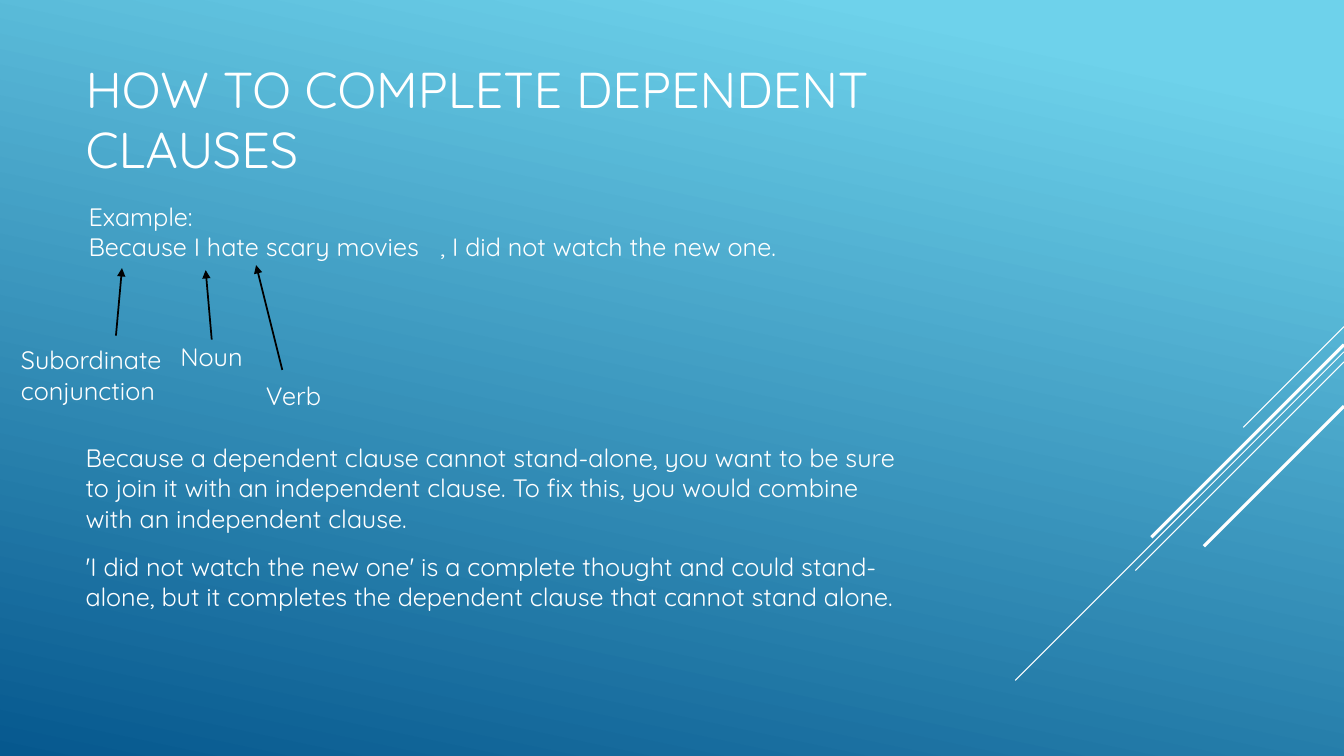
import pptx
import pptx.util
import pptx.dml.color
import pptx.enum.shapes
import pptx.enum.text
import pptx.oxml.ns
import lxml.etree

EMU_PER_PX = 9144
SLIDE_WIDTH, SLIDE_HEIGHT = 1333, 750
FONT = "Quicksand"
WHITE = pptx.dml.color.RGBColor(0xFF, 0xFF, 0xFF)
BLACK = pptx.dml.color.RGBColor(0x00, 0x00, 0x00)
SKY = pptx.dml.color.RGBColor(0x6E, 0xD2, 0xEB)
DEEP_BLUE = pptx.dml.color.RGBColor(0x06, 0x58, 0x8E)

DIAGONALS = [(324, 100, 0.75), (349, 326, 0.75), (359, 207, 0.75), (342, 191, 2.25), (403, 139, 2.25)]
ARROWS = [((115, 333), (121, 266)), ((210, 337), (204, 268)), ((280, 367), (254, 263))]
TEXTS = [
    ("Subordinate conjunction", (11, 337, 184, 71)),
    ("Noun", (169, 334, 91, 40)),
    ("Verb", (254, 372, 164, 40)),
    ("Example:\nBecause I hate scary movies", (78, 195, 413, 71)),
    ("Because a dependent clause cannot stand-alone, you want to be sure to join it "
     "with an independent clause. To fix this, you would combine with an independent "
     "clause.", (75, 434, 828, 131)),
    (", I did not watch the new one.", (427, 225, 413, 40)),
    ("'I did not watch the new one' is a complete thought and could stand-alone, "
     "but it completes the dependent clause that cannot stand alone.", (75, 542, 828, 101)),
]


def px(length):
    return pptx.util.Emu(length * EMU_PER_PX)


def write_text(shape, text, size=18, color=WHITE, anchor=pptx.enum.text.MSO_ANCHOR.TOP):
    frame = shape.text_frame
    frame.text = text
    frame.word_wrap = True
    frame.auto_size = pptx.enum.text.MSO_AUTO_SIZE.NONE
    frame.vertical_anchor = anchor
    for paragraph in frame.paragraphs:
        paragraph.alignment = pptx.enum.text.PP_ALIGN.LEFT
        for run in paragraph.runs:
            run.font.name = FONT
            run.font.size = pptx.util.Pt(size)
            run.font.color.rgb = color


def set_background(slide):
    fill = slide.background.fill
    fill.gradient()
    fill.gradient_angle = 258
    for stop, position, color in zip(fill.gradient_stops, (0.1, 1), (SKY, DEEP_BLUE)):
        stop.position = position
        stop.color.rgb = color


def add_title(slide, text):
    title = slide.shapes.title
    title.left, title.top, title.width, title.height = map(px, (75, 35, 933, 165))
    write_text(title, text, size=36, anchor=pptx.enum.text.MSO_ANCHOR.MIDDLE)


def add_text(slide, text, box):
    write_text(slide.shapes.add_textbox(*map(px, box)), text)


def add_line(slide, start, end, color, width, arrow=False):
    line = slide.shapes.add_connector(
        pptx.enum.shapes.MSO_CONNECTOR.STRAIGHT, *map(px, start + end))
    line.line.color.rgb = color
    line.line.width = pptx.util.Pt(width)
    if arrow:
        outline = line.line._get_or_add_ln()
        lxml.etree.SubElement(outline, pptx.oxml.ns.qn("a:tailEnd"), type="triangle")
    lxml.etree.SubElement(line._element.spPr, pptx.oxml.ns.qn("a:effectLst"))


def main():
    presentation = pptx.Presentation()
    presentation.slide_width = px(SLIDE_WIDTH)
    presentation.slide_height = px(SLIDE_HEIGHT)
    slide = presentation.slides.add_slide(presentation.slide_layouts.get_by_name("Title Only"))
    set_background(slide)
    for top, span, width in DIAGONALS:
        add_line(slide, (SLIDE_WIDTH, top), (SLIDE_WIDTH - span, top + span), WHITE, width)
    add_title(slide, "HOW TO COMPLETE DEPENDENT CLAUSES")
    for start, end in ARROWS:
        add_line(slide, start, end, BLACK, 1.25, arrow=True)
    for text, box in TEXTS:
        add_text(slide, text, box)
    presentation.save("out.pptx")


if __name__ == "__main__":
    main()
